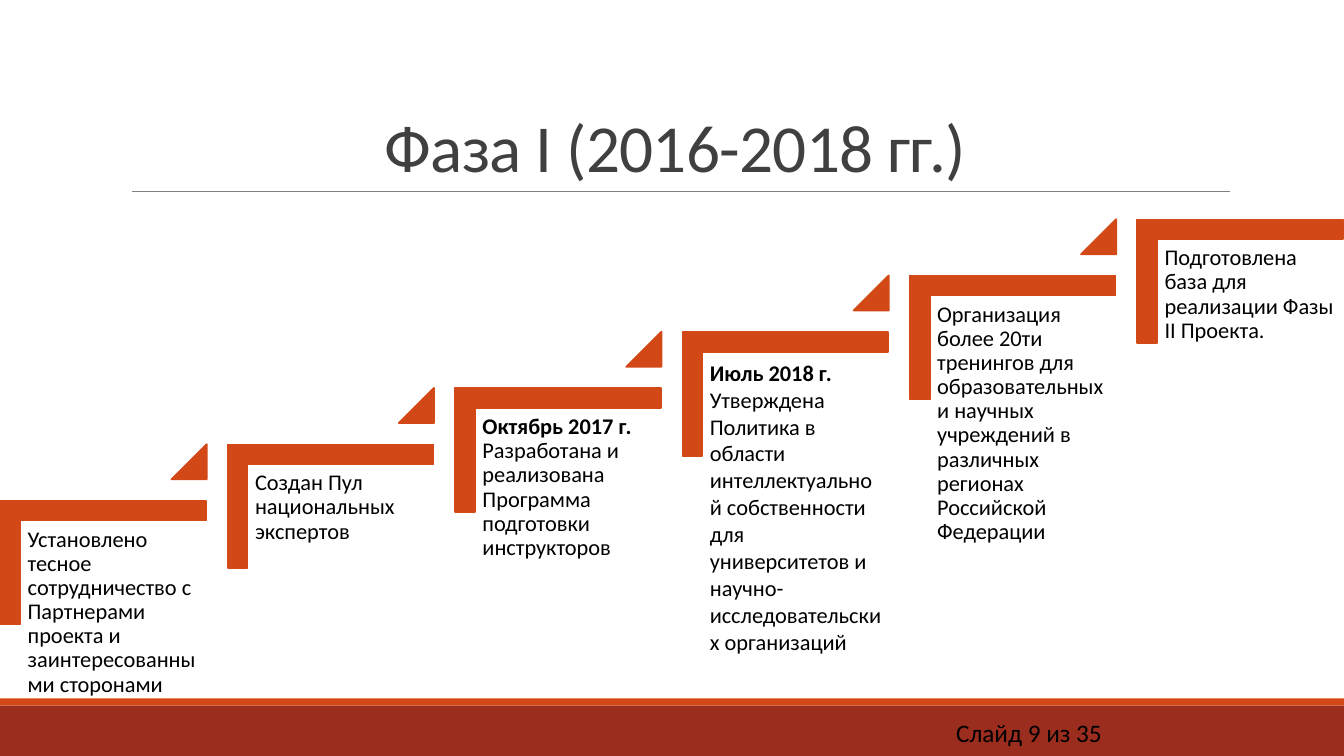
from pptx import Presentation
from pptx.dml.color import RGBColor
from pptx.enum.shapes import MSO_CONNECTOR, MSO_SHAPE
from pptx.enum.text import MSO_ANCHOR, PP_ALIGN
from pptx.oxml.ns import qn
from pptx.util import Pt
from lxml import etree

COLORS = {
    "accent": "D34817",
    "footer": "9B2D1F",
    "rule": "808080",
    "title": "404040",
    "text": "000000",
}
FONT = "Calibri"

# Bold heading, break after the heading, body text
STEPS = [
    ("", False, "Установлено тесное сотрудничество с Партнерами проекта "
                "и заинтересованными сторонами"),
    ("", False, "Создан Пул национальных экспертов"),
    ("Октябрь 2017 г. ", False,
     "Разработана и реализована Программа подготовки инструкторов"),
    ("Июль 2018 г. ", True,
     "Утверждена Политика в области интеллектуальной собственности "
     "для университетов и научно-исследовательских организаций"),
    ("", False, "Организация более 20ти тренингов для образовательных и научных "
                "учреждений в различных регионах Российской Федерации"),
    ("", False, "Подготовлена база для реализации Фазы II Проекта."),
]
STEP_RIGHT = 162.42
STEP_UP = 40.18


def color(name):
    return RGBColor.from_string(COLORS[name])


def add_block(page, kind, left, top, width, height, fill, outlined=False):
    block = page.shapes.add_shape(kind, Pt(left), Pt(top), Pt(width), Pt(height))
    block.shadow.inherit = False
    block.fill.solid()
    block.fill.fore_color.rgb = color(fill)
    if outlined:
        block.line.color.rgb = color(fill)
        block.line.width = Pt(1.25)
    else:
        block.line.fill.background()
    return block


def add_rule(page, left, right, top):
    rule = page.shapes.add_connector(
        MSO_CONNECTOR.STRAIGHT, Pt(left), Pt(top), Pt(right), Pt(top))
    rule.line.color.rgb = color("rule")
    rule.line.width = Pt(0.5)
    etree.SubElement(rule._element.spPr, qn("a:effectLst"))


def add_text(page, left, top, width, height, size, fill="text"):
    box = page.shapes.add_textbox(Pt(left), Pt(top), Pt(width), Pt(height))
    frame = box.text_frame
    frame.word_wrap = True
    para = frame.paragraphs[0]
    para.font.name = FONT
    para.font.size = Pt(size)
    para.font.color.rgb = color(fill)
    return frame, para


def add_span(para, text):
    span = para.add_run()
    span.text = text
    return span


def add_title(page, text):
    frame, para = add_text(page, 86.4, 22.3, 792, 114.5, 48, "title")
    frame.vertical_anchor = MSO_ANCHOR.BOTTOM
    para.alignment = PP_ALIGN.CENTER
    para.line_spacing = 0.85
    span = add_span(para, text)
    span._r.get_or_add_rPr().set("spc", "-50")


def add_step(page, index, heading, breaks, body):
    right, up = index * STEP_RIGHT, index * STEP_UP

    # Corner bracket, turned to open down and to the right
    corner = add_block(page, MSO_SHAPE.CORNER, 29.5 + right, 328.3 - up,
                       88.4, 147, "accent", outlined=True)
    corner.rotation = 90
    corner.adjustments[0] = corner.adjustments[1] = 0.16

    # Step text
    frame, para = add_text(page, 14.8 + right, 372 - up, 132.6, 116, 16)
    frame.margin_left = frame.margin_right = Pt(5)
    frame.margin_top = frame.margin_bottom = Pt(5)
    if not breaks:
        para.line_spacing = 0.9
    if heading:
        add_span(para, heading).font.bold = True
    if breaks:
        para.add_line_break()
    add_span(para, body)

    # Triangle leading up to the next step
    if index < len(STEPS) - 1:
        triangle = add_block(page, MSO_SHAPE.ISOSCELES_TRIANGLE, 122.5 + right,
                             317.3 - up, 25.1, 25.1, "accent", outlined=True)
        triangle.adjustments[0] = 1


def main():
    deck = Presentation()
    deck.slide_width, deck.slide_height = Pt(960), Pt(540)
    page = deck.slides.add_slide(deck.slide_layouts[6])

    # Footer bands and slide number
    add_block(page, MSO_SHAPE.RECTANGLE, 0, 504, 960, 36, "footer")
    add_block(page, MSO_SHAPE.RECTANGLE, 0, 498.8, 960, 5.2, "accent")
    _, para = add_text(page, 675.9, 508.5, 134, 29, 18)
    add_span(para, "Слайд 9 из 35")

    # Title and the line under it
    add_rule(page, 94.3, 878.8, 136.8)
    add_title(page, "Фаза I (2016-2018 гг.)")

    # Staircase of steps
    for index, (heading, breaks, body) in enumerate(STEPS):
        add_step(page, index, heading, breaks, body)

    deck.save("out.pptx")


if __name__ == "__main__":
    main()
